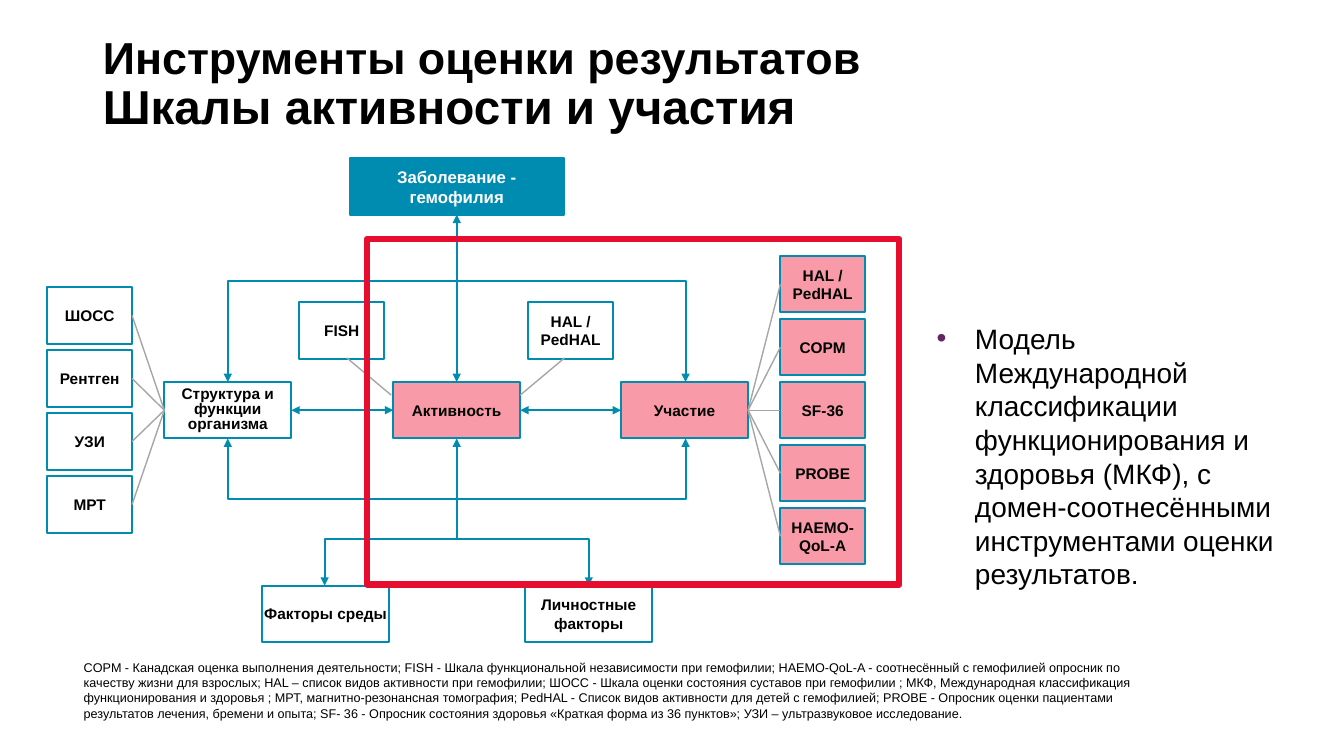
from lxml.etree import SubElement
from pptx import Presentation
from pptx.dml.color import RGBColor
from pptx.enum.shapes import MSO_CONNECTOR, MSO_SHAPE
from pptx.enum.text import MSO_ANCHOR, MSO_AUTO_SIZE, PP_ALIGN
from pptx.oxml.ns import qn
from pptx.util import Inches, Pt

TEAL = RGBColor(0x00, 0x8B, 0xB0)
PINK = RGBColor(0xF9, 0x9A, 0xA8)
RED = RGBColor(0xE6, 0x0D, 0x2E)
GREY = RGBColor(0xA6, 0xA6, 0xA6)
PURPLE = RGBColor(0x64, 0x25, 0x66)
WHITE = RGBColor(0xFF, 0xFF, 0xFF)
BLACK = RGBColor(0x00, 0x00, 0x00)

TOP, LEFT, BOTTOM, RIGHT = range(4)
BOX_HEIGHT = 0.56
DOMAIN_WIDTH = 1.26
TOOL_WIDTH = 0.84
TOOL_PITCH = 2.5 / 4
DOMAIN_TOP = 3.79
DOMAIN_BOTTOM = DOMAIN_TOP + BOX_HEIGHT
CENTRE = 4.53

FOOTNOTE = (
    "COPM - Канадская оценка выполнения деятельности; "
    "FISH - Шкала функциональной независимости при гемофилии; "
    "HAEMO-QoL-A - соотнесённый с гемофилией опросник по качеству жизни для взрослых; "
    "HAL – список видов активности при гемофилии; "
    "ШОСС - Шкала оценки состояния суставов при гемофилии ; "
    "МКФ, Международная классификация функционирования и здоровья ; "
    "МРТ, магнитно-резонансная томография; "
    "PedHAL - Список видов активности для детей с гемофилией; "
    "PROBE - Опросник оценки пациентами результатов лечения, бремени и опыта; "
    "SF- 36 - Опросник состояния здоровья «Краткая форма из 36 пунктов»; "
    "УЗИ – ультразвуковое исследование."
)
MODEL = (
    "Модель Международной классификации функционирования и здоровья (МКФ), "
    "с домен-соотнесёнными инструментами оценки результатов."
)


class Diagram:
    """Draws styled text, boxes and links on one slide."""

    def __init__(self, page, font="Arial"):
        self.page = page
        self.font = font

    def style(self, font, size, color=BLACK, bold=False):
        font.name = self.font
        font.size = Pt(size)
        font.bold = bold
        font.color.rgb = color

    def place(self, holder, left, top, width, height, anchor):
        holder.left, holder.top = Inches(left), Inches(top)
        holder.width, holder.height = Inches(width), Inches(height)
        frame = holder.text_frame
        frame.word_wrap = True
        frame.auto_size = MSO_AUTO_SIZE.NONE
        frame.vertical_anchor = anchor
        return frame

    def title(self, lines):
        frame = self.place(self.page.shapes.title, 0.92, 0.25, 11.5, 1.19, MSO_ANCHOR.MIDDLE)
        para = frame.paragraphs[0]
        para.alignment = PP_ALIGN.LEFT
        para.line_spacing = 0.9
        for number, (text, size) in enumerate(lines):
            if number:
                para.add_line_break()
            span = para.add_run()
            span.text = text
            self.style(span.font, size, bold=True)

    def body(self, index, text, size, area, anchor, bullet=None, indent=0.0):
        frame = self.place(self.page.placeholders[index], *area, anchor)
        para = frame.paragraphs[0]
        para.text = text
        para.space_before = Pt(0)
        props = para._p.get_or_add_pPr()
        props.set("marL", str(Inches(indent)))
        props.set("indent", str(-Inches(indent)))
        if bullet:
            color = SubElement(props, qn("a:buClr"))
            SubElement(color, qn("a:srgbClr")).set("val", str(PURPLE))
            SubElement(props, qn("a:buFont")).set("typeface", self.font)
            SubElement(props, qn("a:buChar")).set("char", bullet)
        else:
            SubElement(props, qn("a:buNone"))
        self.style(para.font, size)
        return frame

    def frame(self, left, top, width, height, line=TEAL, weight=1.5):
        box = self.page.shapes.add_shape(
            MSO_SHAPE.RECTANGLE, Inches(left), Inches(top), Inches(width), Inches(height))
        box.shadow.inherit = False
        box.fill.background()
        box.line.color.rgb = line
        box.line.width = Pt(weight)
        return box

    def box(self, text, left, top, width, fill=WHITE, color=BLACK, size=11, spacing=None, inset=0.1):
        box = self.frame(left, top, width, BOX_HEIGHT)
        box.fill.solid()
        box.fill.fore_color.rgb = fill
        frame = box.text_frame
        frame.word_wrap = True
        frame.vertical_anchor = MSO_ANCHOR.MIDDLE
        frame.margin_left = frame.margin_right = Inches(inset)
        para = frame.paragraphs[0]
        para.text = text
        para.alignment = PP_ALIGN.CENTER
        para.line_spacing = spacing
        self.style(para.font, size, color, bold=True)
        return box

    def tools(self, names, left, top, fill=WHITE):
        return [self.box(name, left, top + row * TOOL_PITCH, TOOL_WIDTH, fill)
                for row, name in enumerate(names)]

    def paint(self, line, color, weight, arrows):
        line.color.rgb = color
        line.width = Pt(weight)
        for end in arrows:
            SubElement(line._get_or_add_ln(), qn(f"a:{end}End")).set("type", "triangle")

    def link(self, start=(0, 0), finish=(0, 0), begin=None, end=None,
             color=TEAL, weight=1.5, arrows=()):
        link = self.page.shapes.add_connector(
            MSO_CONNECTOR.STRAIGHT, *map(Inches, start), *map(Inches, finish))
        SubElement(link._element.spPr, qn("a:effectLst"))
        if begin:
            link.begin_connect(*begin)
        if end:
            link.end_connect(*end)
        self.paint(link.line, color, weight, arrows)

    def ray(self, **ends):
        self.link(color=GREY, weight=1, **ends)

    def elbow(self, turn, reach, tip):
        builder = self.page.shapes.build_freeform(Inches(CENTRE), Inches(turn))
        corners = [(CENTRE + reach, turn), (CENTRE + reach, tip)]
        builder.add_line_segments([(Inches(x), Inches(y)) for x, y in corners], close=False)
        path = builder.convert_to_shape()
        path.shadow.inherit = False
        path.fill.background()
        self.paint(path.line, TEAL, 1.5, ["tail"])


def main():
    deck = Presentation()
    deck.slide_width, deck.slide_height = Inches(13.33), Inches(7.5)
    page = deck.slides.add_slide(deck.slide_layouts[3])
    diagram = Diagram(page)

    diagram.title([("Инструменты оценки результатов", 32), ("Шкалы активности и участия", 34)])
    diagram.body(1, MODEL, 20, (9.19, 3.14, 3.7, 2.79), MSO_ANCHOR.TOP, "•", 0.38)
    footnote = diagram.body(2, FOOTNOTE, 9, (0.73, 6.5, 10.85, 0.65), MSO_ANCHOR.BOTTOM)
    footnote.margin_bottom = 0

    disease = diagram.box("Заболевание - гемофилия", 3.47, 1.57, 2.12, TEAL, WHITE, 12)
    structure = diagram.box("Структура и функции организма", 1.63, DOMAIN_TOP, DOMAIN_WIDTH, spacing=0.8)
    activity = diagram.box("Активность", 3.9, DOMAIN_TOP, DOMAIN_WIDTH, PINK)
    participation = diagram.box("Участие", 6.16, DOMAIN_TOP, DOMAIN_WIDTH, PINK)
    diagram.box("Факторы среды", 2.6, 5.81, DOMAIN_WIDTH, inset=0)
    diagram.box("Личностные факторы", 5.21, 5.81, DOMAIN_WIDTH)
    diagram.box("FISH", 2.97, 3, TOOL_WIDTH)
    diagram.box("HAL / PedHAL", 5.24, 3, TOOL_WIDTH)
    structure_tools = diagram.tools(["ШОСС", "Рентген", "УЗИ", "МРТ"], 0.47, 2.85)
    participation_tools = diagram.tools(
        ["HAL / PedHAL", "COPM", "SF-36", "PROBE", "HAEMO-QoL-A"], 7.74, 2.54, PINK)

    both = ["head", "tail"]
    diagram.link(begin=(disease, BOTTOM), end=(activity, TOP), arrows=both)
    for near, far in [(structure, activity), (activity, participation)]:
        diagram.link(begin=(near, RIGHT), end=(far, LEFT), arrows=both)
    diagram.link(finish=(CENTRE, 5.35), begin=(activity, BOTTOM), arrows=["head"])
    for turn, reach, tip in [(2.79, 2.27, DOMAIN_TOP), (4.95, 2.27, DOMAIN_BOTTOM), (5.35, 1.31, 5.81)]:
        for side in (-1, 1):
            diagram.elbow(turn, side * reach, tip)

    for tool in structure_tools:
        diagram.ray(begin=(tool, RIGHT), end=(structure, LEFT))
    for tool in participation_tools:
        diagram.ray(begin=(participation, RIGHT), end=(tool, LEFT))
    diagram.ray(start=(3.44, 3.55), finish=(3.88, 3.92))
    diagram.ray(start=(5.6, 3.55), finish=(5.16, 3.92))

    diagram.frame(3.64, 2.37, 5.28, 3.43, RED, 4.5)
    deck.save("out.pptx")


if __name__ == "__main__":
    main()
